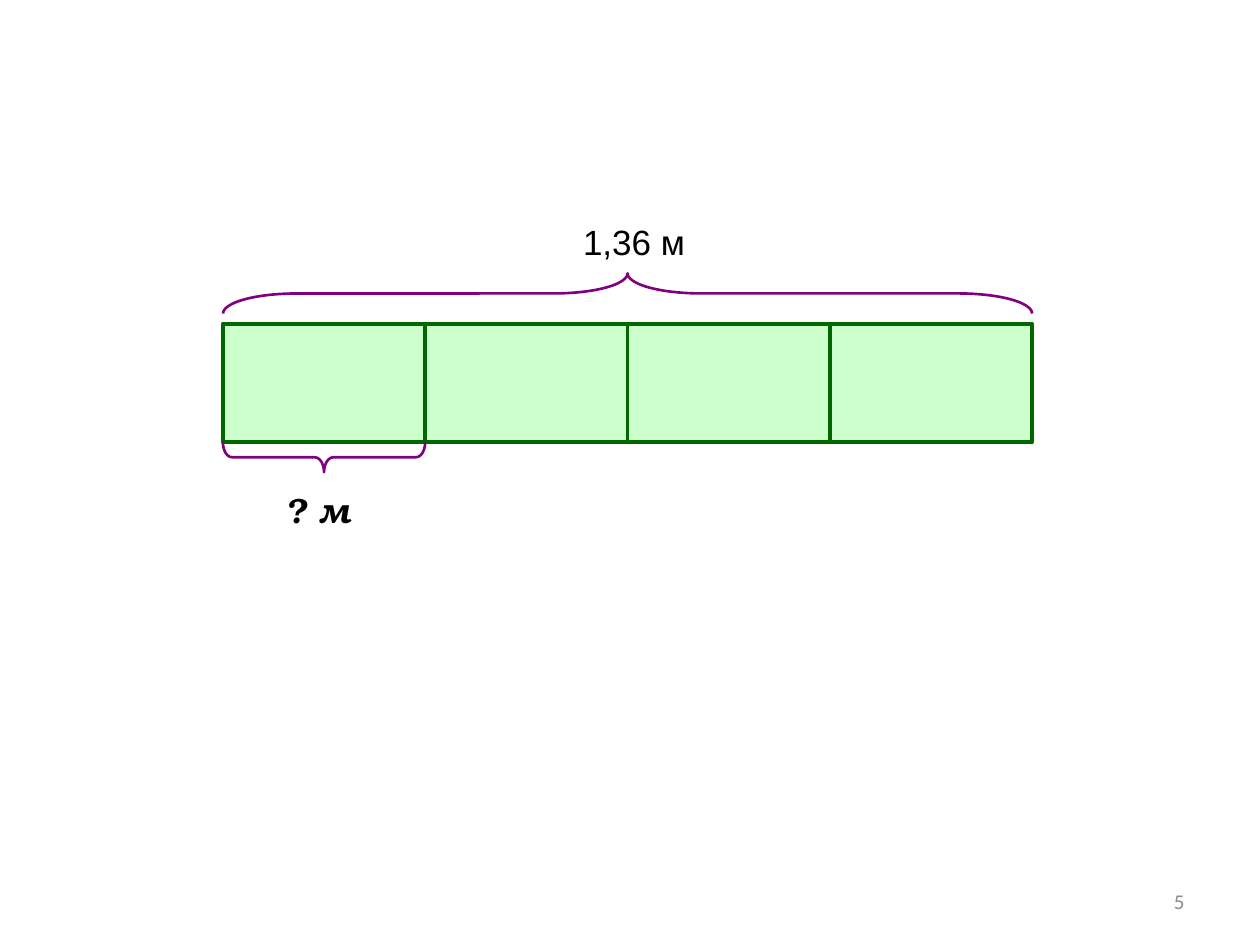
from pptx import Presentation
from pptx.dml.color import RGBColor
from pptx.enum.shapes import MSO_SHAPE
from pptx.enum.text import MSO_ANCHOR, PP_ALIGN
from pptx.util import Pt

RECTANGLE = MSO_SHAPE.RECTANGLE
LEFT_BRACE = MSO_SHAPE.LEFT_BRACE
TOP, MIDDLE = MSO_ANCHOR.TOP, MSO_ANCHOR.MIDDLE
LEFT, RIGHT = PP_ALIGN.LEFT, PP_ALIGN.RIGHT

COLORS = {
    "cell": "CCFFCC",
    "cell_line": "006600",
    "brace": "800080",
    "text": "000000",
    "number": "8C8C8C",
}
PARTS = 4
BLANK_LAYOUT = 6


def color(name):
    """Return the named colour."""
    return RGBColor.from_string(COLORS[name])


def add_label(page, box, text, font, size, ink="text", align=LEFT, anchor=TOP, strong=False):
    """Place one line of text in the box."""
    frame = page.shapes.add_textbox(*map(Pt, box)).text_frame
    frame.word_wrap = True
    frame.vertical_anchor = anchor
    para = frame.paragraphs[0]
    para.alignment = align
    span = para.add_run()
    span.text = text
    span.font.name = font
    span.font.size = Pt(size)
    span.font.bold = span.font.italic = strong
    span.font.color.rgb = color(ink)


def add_bar(page, box):
    """Divide the box into equal cells, grouped as one bar."""
    left, top, width, height = box
    cell_width = width / PARTS
    bar = page.shapes.add_group_shape()
    for index in range(PARTS):
        cell = bar.shapes.add_shape(
            RECTANGLE, Pt(left + index * cell_width), Pt(top), Pt(cell_width), Pt(height)
        )
        cell.shadow.inherit = False
        cell.fill.solid()
        cell.fill.fore_color.rgb = color("cell")
        cell.line.color.rgb = color("cell_line")
        cell.line.width = Pt(2.25)


def add_brace(page, box, rotation, bend):
    """Turn a left brace so that it lies across the box."""
    left, top, width, height = box
    shift = (width - height) / 2
    brace = page.shapes.add_shape(
        LEFT_BRACE, Pt(left + shift), Pt(top - shift), Pt(height), Pt(width)
    )
    brace.rotation = rotation
    brace.adjustments[0] = bend
    brace.shadow.inherit = False
    brace.fill.background()
    brace.line.color.rgb = color("brace")
    brace.line.width = Pt(1.5)


def add_diagram(page, box):
    """Draw the divided bar with its whole and part lengths."""
    left, top, width, height = box
    bottom = top + height
    add_label(page, (left + 198.7, top - 62.6, 115.2, 31.7), "1,36 м", "Arial", 20)
    add_bar(page, box)
    add_brace(page, (left, top - 28.8, width, 23), 90, 1.83)
    add_brace(page, (left, bottom, width / PARTS, 17), 270, 0.31)
    add_label(
        page, (left + 28.1, bottom + 23, 62.6, 31), "? м", "TeX Gyre Bonum", 20, strong=True
    )


def main():
    """Build and save the slide."""
    deck = Presentation()
    deck.slide_width, deck.slide_height = Pt(720), Pt(540)
    page = deck.slides.add_slide(deck.slide_layouts[BLANK_LAYOUT])
    add_label(
        page, (516, 500.5, 168, 28.75), "5", "Calibri", 12, "number", RIGHT, MIDDLE
    )
    add_diagram(page, (127.4, 185, 462.4, 67.8))
    deck.save("out.pptx")


if __name__ == "__main__":
    main()
